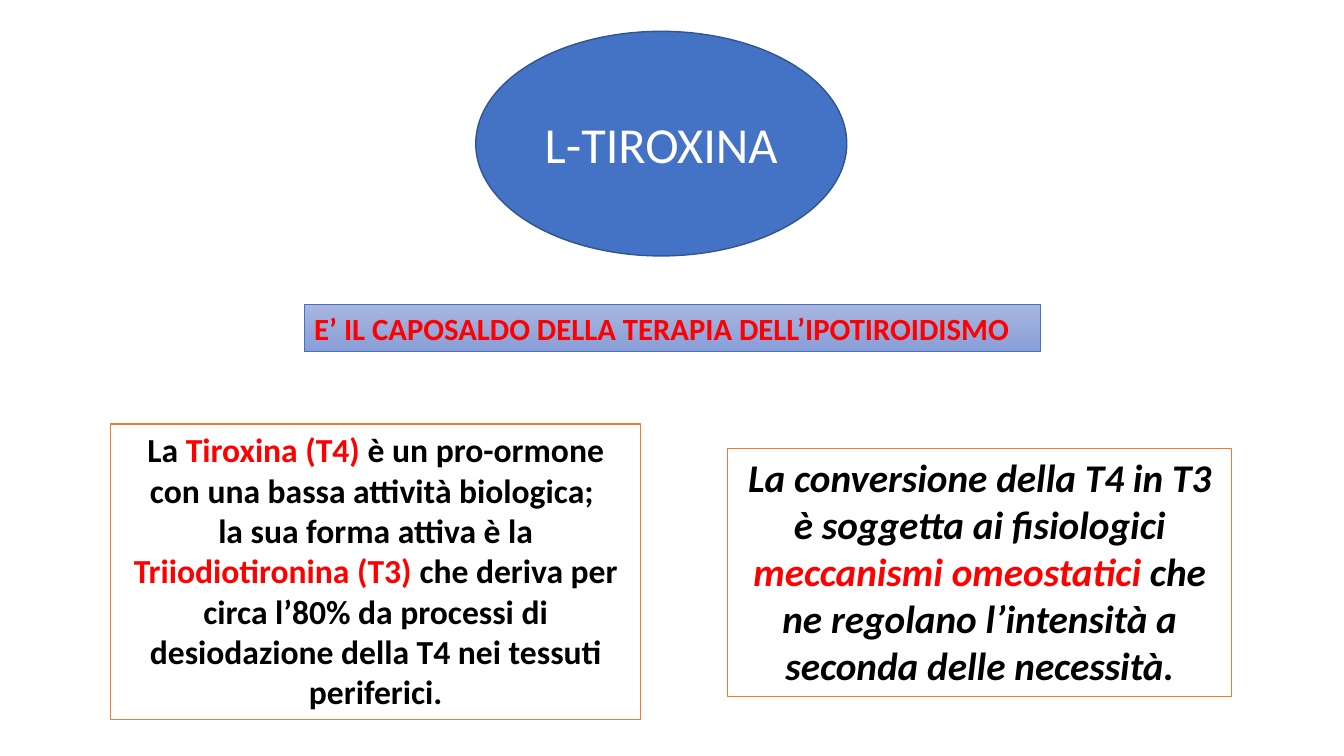
from dataclasses import dataclass

from pptx import Presentation
from pptx.dml.color import RGBColor
from pptx.enum.shapes import MSO_SHAPE
from pptx.enum.text import MSO_ANCHOR, MSO_AUTO_SIZE, PP_ALIGN
from pptx.util import Cm, Pt

DRUG = [["L-TIROXINA"]]
CLAIM = [["E’ IL CAPOSALDO DELLA TERAPIA DELL’IPOTIROIDISMO"]]
HORMONE = [
    ["La ", "Tiroxina (T4) ", "è un pro-ormone con una bassa attività biologica; "],
    ["la sua forma attiva è la ", "Triiodiotironina (T3) ",
     "che deriva per circa l’80% da processi di desiodazione della T4 nei tessuti periferici."],
]
BALANCE = [
    ["La conversione della T4 in T3 è soggetta ai fisiologici ", "meccanismi omeostatici ",
     "che ne regolano l’intensità a seconda delle necessità."],
]


@dataclass(frozen=True)
class Theme:
    """Colours, font and type sizes of the slide."""
    font: str = "Calibri"
    white: str = "FFFFFF"
    black: str = "000000"
    red: str = "FF0000"
    blue: str = "4472C4"
    navy: str = "325491"
    orange: str = "ED7D31"
    fade: tuple = ("A8B7DF", "889ED7")
    drug: int = 36
    claim: int = 22
    hormone: int = 24
    balance: int = 28


LOOK = Theme()


def tint(code):
    """Turn a hex code into a colour."""
    return RGBColor.from_string(code)


def draw(slide, kind, place, fill, edge, width=1):
    """Add one filled and outlined shape."""
    shape = slide.shapes.add_shape(kind, *map(Cm, place))
    shape.shadow.inherit = False
    if isinstance(fill, tuple):
        shape.fill.gradient()
        shape.fill.gradient_angle = 270
        for stop, code in zip(shape.fill.gradient_stops, fill):
            stop.color.rgb = tint(code)
    else:
        shape.fill.solid()
        shape.fill.fore_color.rgb = tint(fill)
    shape.line.color.rgb = tint(edge)
    shape.line.width = Pt(width)
    return shape


def write(shape, text, size, color, bold=True, italic=False,
          align=PP_ALIGN.CENTER, anchor=MSO_ANCHOR.TOP):
    """Fill a shape with paragraphs, with every second run in red."""
    frame = shape.text_frame
    frame.word_wrap = True
    frame.vertical_anchor = anchor
    if anchor == MSO_ANCHOR.TOP:
        frame.auto_size = MSO_AUTO_SIZE.SHAPE_TO_FIT_TEXT
    for row, parts in enumerate(text):
        para = frame.add_paragraph() if row else frame.paragraphs[0]
        para.alignment = align
        font = para.font
        font.name, font.size = LOOK.font, Pt(size)
        font.bold, font.italic = bold, italic
        font.color.rgb = tint(color)
        for spot, part in enumerate(parts):
            run = para.add_run()
            run.text = part
            run.font.color.rgb = tint(LOOK.red if spot % 2 else color)


def main():
    """Build the slide and save it."""
    deck = Presentation()
    deck.slide_width, deck.slide_height = Cm(33.87), Cm(19.05)
    slide = deck.slides.add_slide(deck.slide_layouts[6])

    cards = [
        (HORMONE, (2.79, 10.69, 13.36, 7.44), LOOK.hormone, False),
        (BALANCE, (18.34, 11.3, 12.7, 6.25), LOOK.balance, True),
    ]
    for text, place, size, italic in cards:
        card = draw(slide, MSO_SHAPE.RECTANGLE, place, LOOK.white, LOOK.orange)
        write(card, text, size, LOOK.black, italic=italic)

    oval = draw(slide, MSO_SHAPE.OVAL, (11.99, 0.79, 9.35, 5.66), LOOK.blue, LOOK.navy)
    write(oval, DRUG, LOOK.drug, LOOK.white, bold=False, anchor=MSO_ANCHOR.MIDDLE)

    banner = draw(slide, MSO_SHAPE.RECTANGLE, (7.67, 7.67, 18.54, 1.19),
                  LOOK.fade, LOOK.blue, 0.5)
    write(banner, CLAIM, LOOK.claim, LOOK.red, align=PP_ALIGN.LEFT)

    deck.save("out.pptx")


if __name__ == "__main__":
    main()
